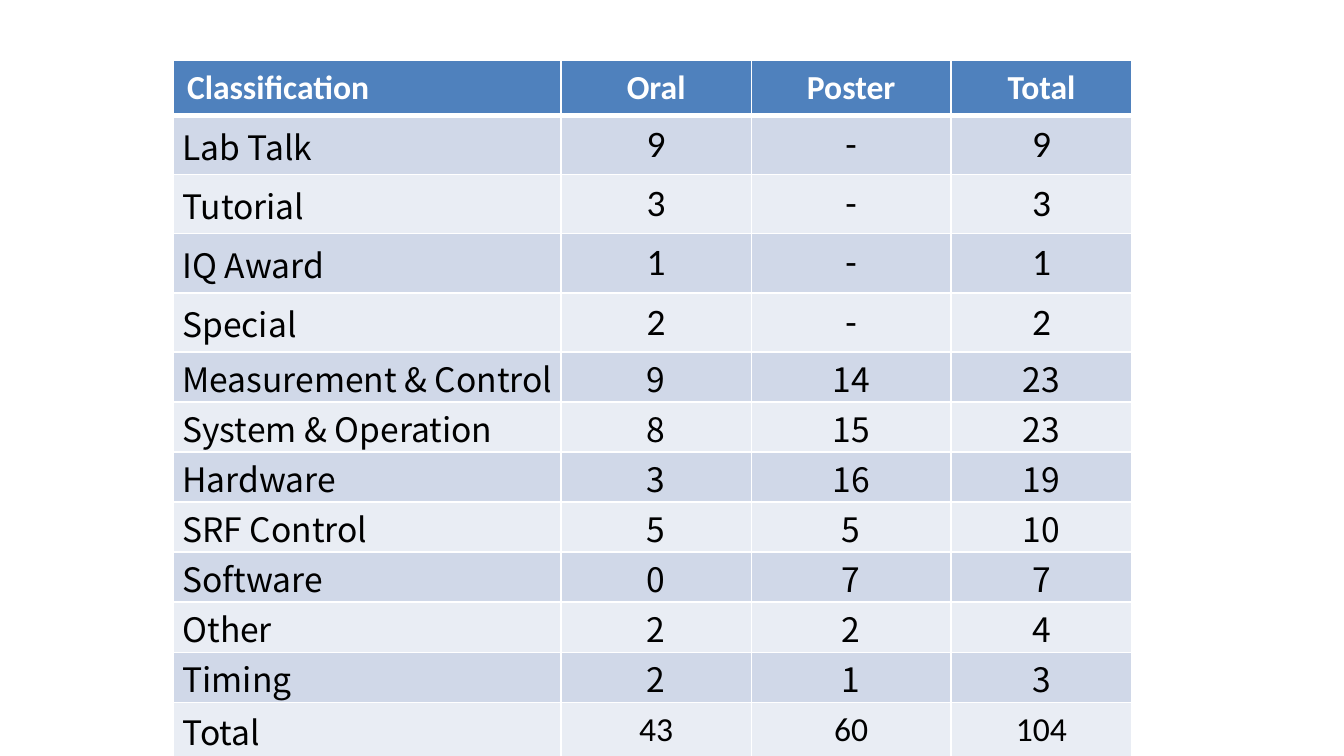
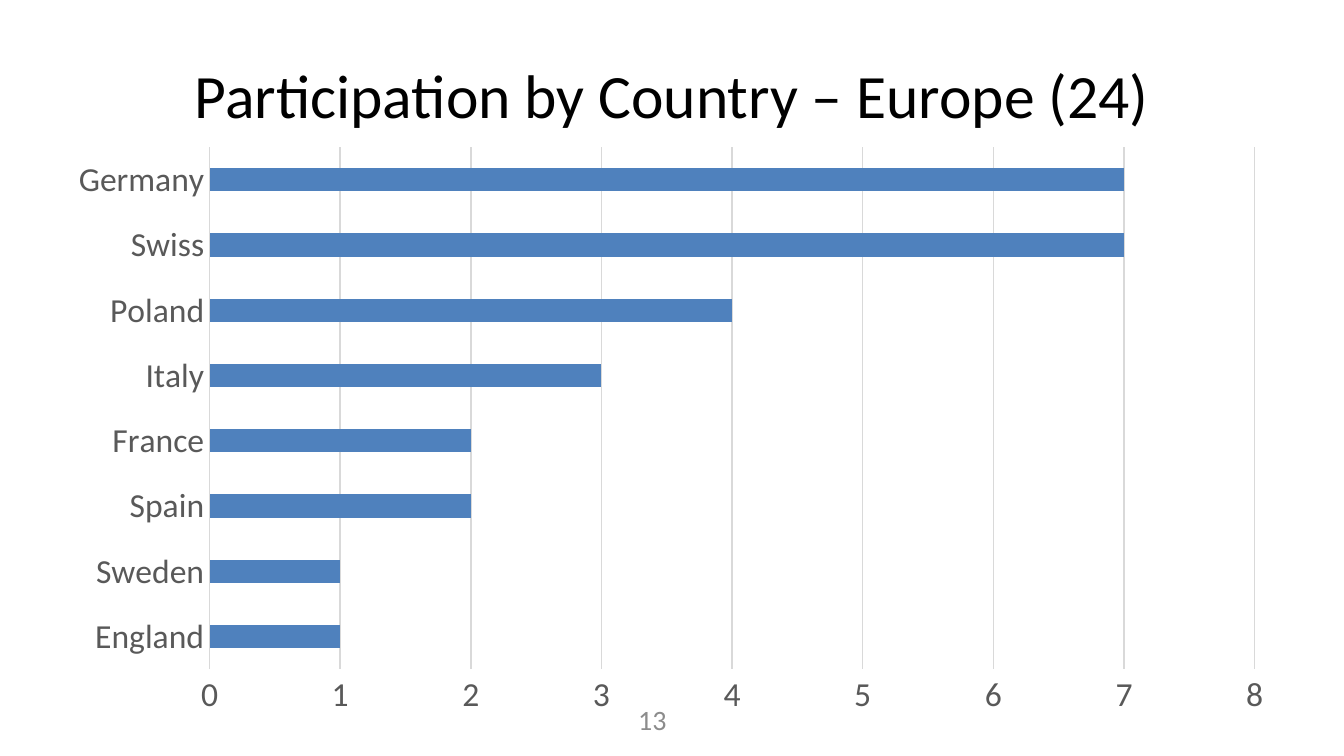
from lxml import etree
from pptx import Presentation
from pptx.chart.data import CategoryChartData
from pptx.dml.color import RGBColor
from pptx.enum import chart as charts, text
from pptx.oxml import ns
from pptx.util import Pt

COLORS = {
    "accent": "4F81BD", "band_dark": "D0D8E8", "band_light": "E9EDF4",
    "white": "FFFFFF", "black": "000000", "axis": "595959",
    "grid": "D9D9D9", "number": "8C8C8C",
}
LATIN, KOREAN = "Calibri", "Noto Sans CJK KR"

# Boxes: left, top, width, height
TITLE_BOX = (36, 16.5, 648, 68)
NUMBER_BOX = (265.5, 374.5, 168, 21.5)
TABLE_BOX = (93, 32.5, 513.5, 327)
CHART_BOX = (29, 72.5, 661, 317)

COLUMN_WIDTHS = (207.5, 102, 107, 97)
TALK_COUNTS = [
    ("Classification", "Oral", "Poster", "Total"),
    ("Lab Talk", "9", "-", "9"),
    ("Tutorial", "3", "-", "3"),
    ("IQ Award", "1", "-", "1"),
    ("Special", "2", "-", "2"),
    ("Measurement & Control", "9", "14", "23"),
    ("System & Operation", "8", "15", "23"),
    ("Hardware", "3", "16", "19"),
    ("SRF Control", "5", "5", "10"),
    ("Software", "0", "7", "7"),
    ("Other", "2", "2", "4"),
    ("Timing", "2", "1", "3"),
    ("Total", "43", "60", "104"),
]
LAST_ROW = len(TALK_COUNTS) - 1
SINGLE_FORMAT_ROWS = range(1, 5)  # sessions without posters

PARTICIPANTS = {
    "England": 1, "Sweden": 1, "Spain": 2, "France": 2,
    "Italy": 3, "Poland": 4, "Swiss": 7, "Germany": 7,
}


def rgb(name):
    return RGBColor.from_string(COLORS[name])


def style_font(font, size, color, name=LATIN, bold=False):
    font.size = Pt(size)
    font.name = name
    font.bold = bold
    font.color.rgb = rgb(color)


def write_text(frame, content, align="CENTER", **font_format):
    paragraph = frame.paragraphs[0]
    paragraph.alignment = getattr(text.PP_ALIGN, align)
    run = paragraph.add_run()
    run.text = content
    style_font(run.font, **font_format)


def add_label(slide, box, content, **font_format):
    frame = slide.shapes.add_textbox(*map(Pt, box)).text_frame
    frame.word_wrap = True
    frame.vertical_anchor = text.MSO_ANCHOR.MIDDLE
    write_text(frame, content, **font_format)


# Table
def add_borders(cell, **widths):
    """Draw white borders; keys are the sides L, R, T and B."""
    properties = cell._tc.get_or_add_tcPr()
    for side, width in widths.items():
        line = etree.SubElement(properties, ns.qn(f"a:ln{side}"), w=str(Pt(width)))
        fill = etree.SubElement(line, ns.qn("a:solidFill"))
        etree.SubElement(fill, ns.qn("a:srgbClr"), val=COLORS["white"])


def format_cell(cell, content, row, column):
    is_header = row == 0
    is_label = column == 0
    in_latin = is_header or not is_label and (
        row in SINGLE_FORMAT_ROWS or row == LAST_ROW)

    if is_header:
        add_borders(cell, L=1, R=1, T=1, B=3)
    else:
        add_borders(cell, L=1, R=1, B=1)
    cell.fill.solid()
    band = "band_dark" if row % 2 else "band_light"
    cell.fill.fore_color.rgb = rgb("accent" if is_header else band)

    if not in_latin:
        cell.vertical_anchor = text.MSO_ANCHOR.MIDDLE
        cell.margin_left = Pt(4.75 if is_label else 0.75)
        cell.margin_right = cell.margin_top = Pt(0.75)
        cell.margin_bottom = 0
    write_text(
        cell.text_frame, content,
        align="LEFT" if is_label else "CENTER",
        size=20 if in_latin and row in SINGLE_FORMAT_ROWS else 18,
        color="white" if is_header else "black",
        name=LATIN if in_latin else KOREAN,
        bold=is_header)


def row_height(row):
    if row == 0:
        return 20
    return 21 if row in SINGLE_FORMAT_ROWS or row == LAST_ROW else 19.5


def add_counts_table(slide, box):
    frame = slide.shapes.add_table(
        len(TALK_COUNTS), len(COLUMN_WIDTHS), *map(Pt, box))
    table = frame.table
    for column, width in zip(table.columns, COLUMN_WIDTHS):
        column.width = Pt(width)
    for row, contents in enumerate(TALK_COUNTS):
        table.rows[row].height = Pt(row_height(row))
        for column, content in enumerate(contents):
            format_cell(table.cell(row, column), content, row, column)
    frame.height = Pt(box[3])


# Chart
def add_country_chart(slide, box):
    data = CategoryChartData()
    data.categories = list(PARTICIPANTS)
    data.add_series("Series 1", list(PARTICIPANTS.values()))
    chart = slide.shapes.add_chart(
        charts.XL_CHART_TYPE.BAR_CLUSTERED, *map(Pt, box), data).chart
    chart.has_legend = chart.has_title = False
    style_font(chart.font, 18, "black")

    plot = chart.plots[0]
    plot.gap_width = 182
    plot.vary_by_categories = False
    bars = plot.series[0].format.fill
    bars.solid()
    bars.fore_color.rgb = rgb("accent")

    countries, counts = chart.category_axis, chart.value_axis
    for axis in (countries, counts):
        axis.major_tick_mark = axis.minor_tick_mark = charts.XL_TICK_MARK.NONE
        style_font(axis.tick_labels.font, 18, "axis")
    counts.minimum_scale, counts.maximum_scale, counts.major_unit = 0, 8, 1
    counts.format.line.fill.background()
    counts.has_major_gridlines = True
    for line in (countries.format.line, counts.major_gridlines.format.line):
        line.color.rgb = rgb("grid")
        line.width = Pt(0.75)


# Slides
def add_blank_slide(presentation):
    return presentation.slides.add_slide(presentation.slide_layouts[6])


def build_counts_slide(presentation):
    add_counts_table(add_blank_slide(presentation), TABLE_BOX)


def build_country_slide(presentation):
    slide = add_blank_slide(presentation)
    add_label(slide, TITLE_BOX, "Participation by Country – Europe (24)",
              size=33, color="black")
    add_label(slide, NUMBER_BOX, "13", size=15, color="number")
    add_country_chart(slide, CHART_BOX)


def main():
    presentation = Presentation()
    presentation.slide_width = Pt(720)
    presentation.slide_height = Pt(405)
    build_counts_slide(presentation)
    build_country_slide(presentation)
    presentation.save("out.pptx")


if __name__ == "__main__":
    main()
